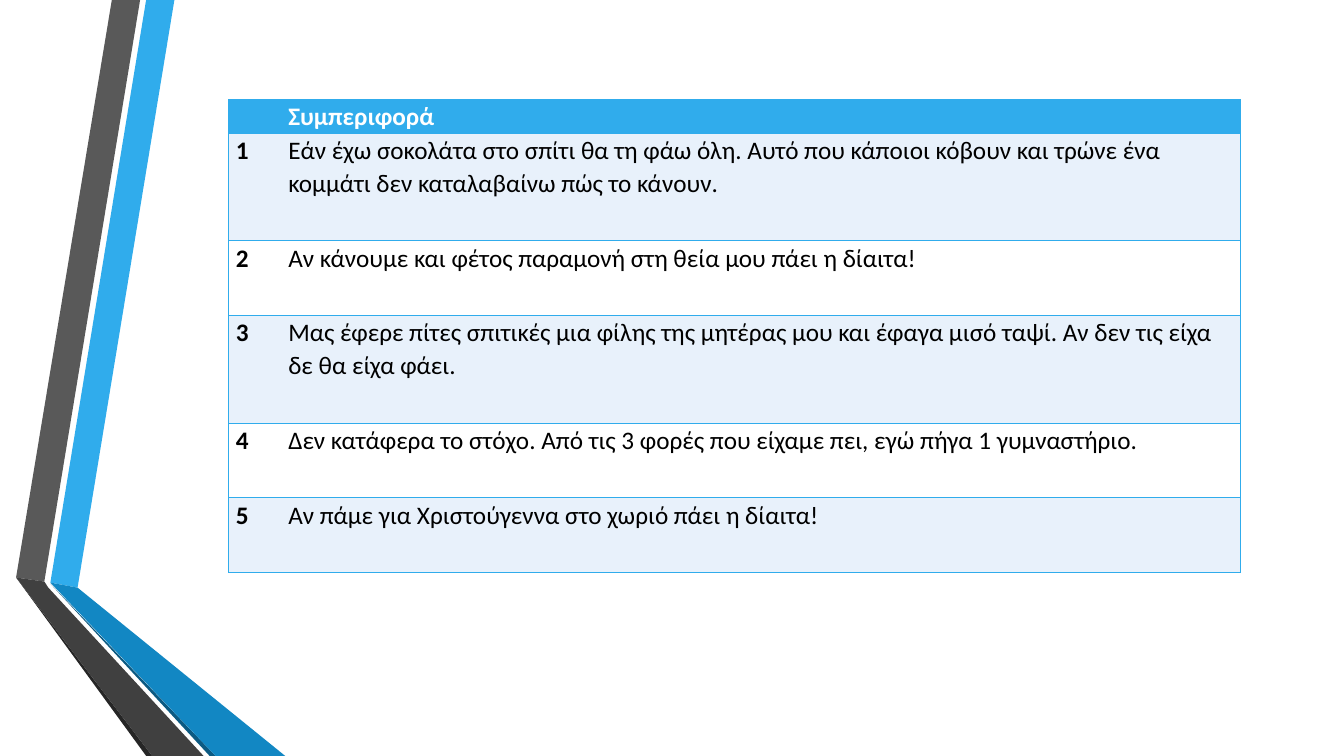
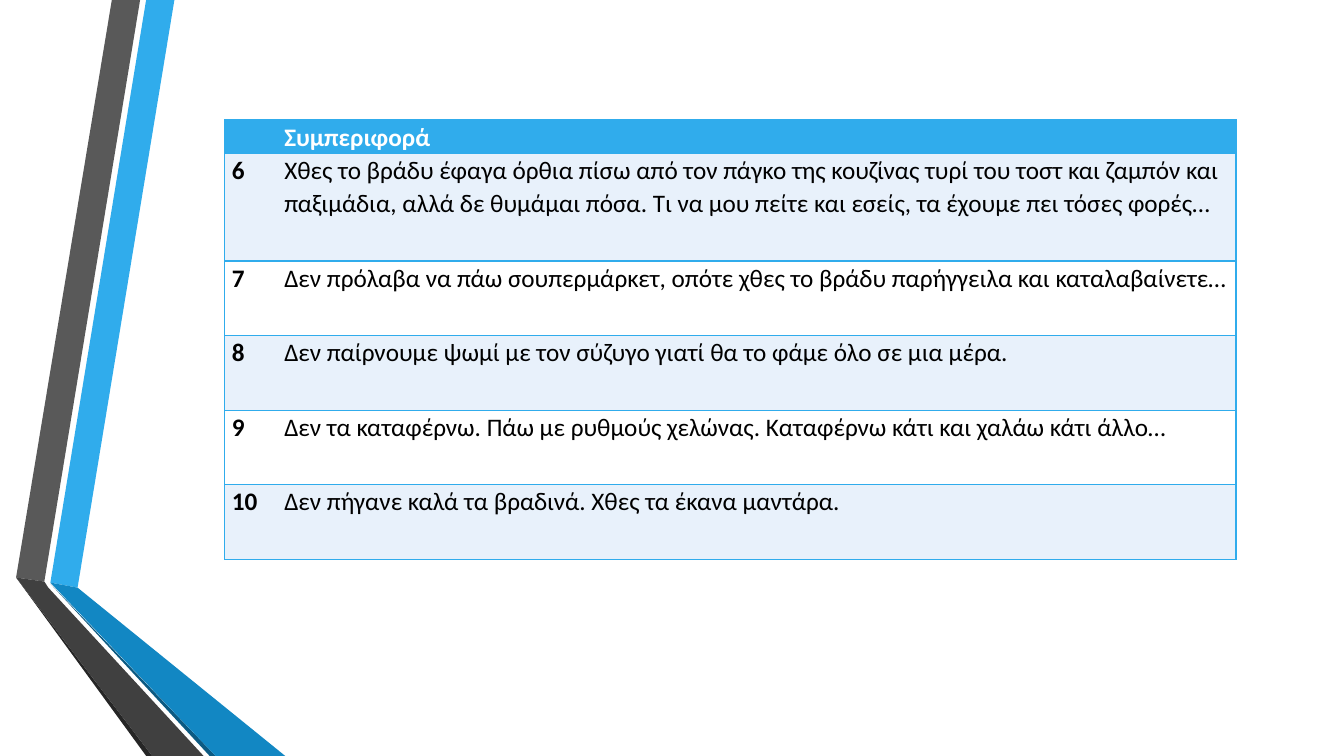
"""Build two slides listing eating behaviours in a table beside folded ribbons."""
import pptx
import pptx.dml.color
import pptx.oxml
import pptx.oxml.ns
import pptx.util

Inches = pptx.util.Inches
Pt = pptx.util.Pt
RGBColor = pptx.dml.color.RGBColor

BLUE = RGBColor(0x30, 0xAC, 0xEC)
MID_BLUE = RGBColor(0x12, 0x87, 0xC3)
DEEP_BLUE = RGBColor(0x0C, 0x5A, 0x82)
GREY = RGBColor(0x59, 0x59, 0x59)
DARK_GREY = RGBColor(0x40, 0x40, 0x40)
DEEP_GREY = RGBColor(0x26, 0x26, 0x26)
PALE_BLUE = RGBColor(0xE8, 0xF1, 0xFB)
WHITE = RGBColor(0xFF, 0xFF, 0xFF)
BLACK = RGBColor(0x00, 0x00, 0x00)

FONT = "Calibri"
HEADING = "Συμπεριφορά"
COLUMN_WIDTHS = (0.52, 9.51)
LINE_HEIGHT = 0.33
ROW_GAP = 0.41

RIBBONS = [
    (BLUE, [(0.5, 5.78), (0.77, 5.83), (1.73, 0), (1.45, 0)]),
    (GREY, [(1.39, 0), (1.11, 0), (0.16, 5.73), (0.44, 5.77)]),
    (DEEP_GREY, [(0.16, 5.73), (1.45, 7.5), (1.51, 7.5)]),
    (DEEP_BLUE, [(0.5, 5.79), (2.08, 7.5), (2.14, 7.5)]),
    (MID_BLUE, [(0.5, 5.78), (2.14, 7.5), (2.83, 7.5), (0.77, 5.83)]),
    (DARK_GREY, [(2.02, 7.5), (0.48, 5.83), (0.44, 5.77), (0.16, 5.73), (1.51, 7.5)]),
]

SLIDES = [
    {
        "left": 2.27, "top": 0.99, "first_number": 1,
        "behaviours": [
            ("Εάν έχω σοκολάτα στο σπίτι θα τη φάω όλη. Αυτό που κάποιοι κόβουν και "
             "τρώνε ένα κομμάτι δεν καταλαβαίνω πώς το κάνουν.", 2),
            ("Αν κάνουμε και φέτος παραμονή στη θεία μου πάει η δίαιτα!", 1),
            ("Μας έφερε πίτες σπιτικές μια φίλης της μητέρας μου και έφαγα μισό ταψί. "
             "Αν δεν τις είχα δε θα είχα φάει.", 2),
            ("Δεν κατάφερα το στόχο. Από τις 3 φορές που είχαμε πει, εγώ πήγα 1 "
             "γυμναστήριο.", 1),
            ("Αν πάμε για Χριστούγεννα στο χωριό πάει η δίαιτα!", 1),
        ],
    },
    {
        "left": 2.23, "top": 1.19, "first_number": 6,
        "behaviours": [
            ("Χθες το βράδυ έφαγα όρθια πίσω από τον πάγκο της κουζίνας τυρί του τοστ "
             "και ζαμπόν και παξιμάδια, αλλά δε θυμάμαι πόσα. Τι να μου πείτε και "
             "εσείς, τα έχουμε πει τόσες φορές…", 2),
            ("Δεν πρόλαβα να πάω σουπερμάρκετ, οπότε χθες το βράδυ παρήγγειλα και "
             "καταλαβαίνετε…", 1),
            ("Δεν παίρνουμε ψωμί με τον σύζυγο γιατί θα το φάμε όλο σε μια μέρα.", 1),
            ("Δεν τα καταφέρνω. Πάω με ρυθμούς χελώνας. Καταφέρνω κάτι και χαλάω κάτι "
             "άλλο…", 1),
            ("Δεν πήγανε καλά τα βραδινά. Χθες τα έκανα μαντάρα.", 1),
        ],
    },
]


def add_ribbons(layout, slide):
    for placeholder in list(layout.placeholders):
        layout.shapes.element.remove(placeholder.element)
    for color, corners in RIBBONS:
        start, *rest = [(Inches(x), Inches(y)) for x, y in corners]
        builder = slide.shapes.build_freeform(*start)
        builder.add_line_segments(rest, close=True)
        ribbon = builder.convert_to_shape()
        ribbon.shadow.inherit = False
        ribbon.fill.solid()
        ribbon.fill.fore_color.rgb = color
        ribbon.line.fill.background()
        layout.shapes.element.append(ribbon.element)


def add_borders(cell, inner_side):
    properties = cell._tc.get_or_add_tcPr()
    namespace = pptx.oxml.ns.nsdecls("a")
    for side in "LRTB":
        paint = ("<a:noFill/>" if side == inner_side else
                 f'<a:solidFill><a:srgbClr val="{BLUE}"/></a:solidFill>')
        properties.append(pptx.oxml.parse_xml(
            f'<a:ln{side} {namespace} w="{Pt(1)}">{paint}</a:ln{side}>'))


def format_cell(cell, text, fill, color, bold, inner_side):
    cell.margin_left = cell.margin_right = Inches(0.07)
    cell.margin_top = cell.margin_bottom = 0
    add_borders(cell, inner_side)
    cell.fill.solid()
    cell.fill.fore_color.rgb = fill
    cell.text_frame.text = text
    paragraph = cell.text_frame.paragraphs[0]
    paragraph.line_spacing = 1.07
    for run in paragraph.runs:
        run.font.name = FONT
        run.font.size = Pt(18)
        run.font.bold = bold
        run.font.color.rgb = color


def add_behaviours(slide, content):
    behaviours = content["behaviours"]
    heights = [LINE_HEIGHT] + [ROW_GAP + LINE_HEIGHT * lines for _, lines in behaviours]
    rows = [("", HEADING)] + [
        (str(number), text)
        for number, (text, _) in enumerate(behaviours, content["first_number"])]
    table = slide.shapes.add_table(
        len(rows), len(COLUMN_WIDTHS), Inches(content["left"]), Inches(content["top"]),
        Inches(sum(COLUMN_WIDTHS)), Inches(sum(heights))).table
    table.horz_banding = False
    for column, width in zip(table.columns, COLUMN_WIDTHS):
        column.width = Inches(width)
    for index, (texts, height) in enumerate(zip(rows, heights)):
        table.rows[index].height = Inches(height)
        header = index == 0
        fill = BLUE if header else PALE_BLUE if index % 2 else WHITE
        for column, text in enumerate(texts):
            format_cell(table.cell(index, column), text, fill,
                        WHITE if header else BLACK, header or column == 0, "RL"[column])


def main():
    deck = pptx.Presentation()
    deck.slide_width = Inches(13.33)
    deck.slide_height = Inches(7.5)
    blank = deck.slide_layouts[6]
    slides = [deck.slides.add_slide(blank) for _ in SLIDES]
    add_ribbons(blank, slides[0])
    for slide, content in zip(slides, SLIDES):
        add_behaviours(slide, content)
    deck.save("out.pptx")


if __name__ == "__main__":
    main()
